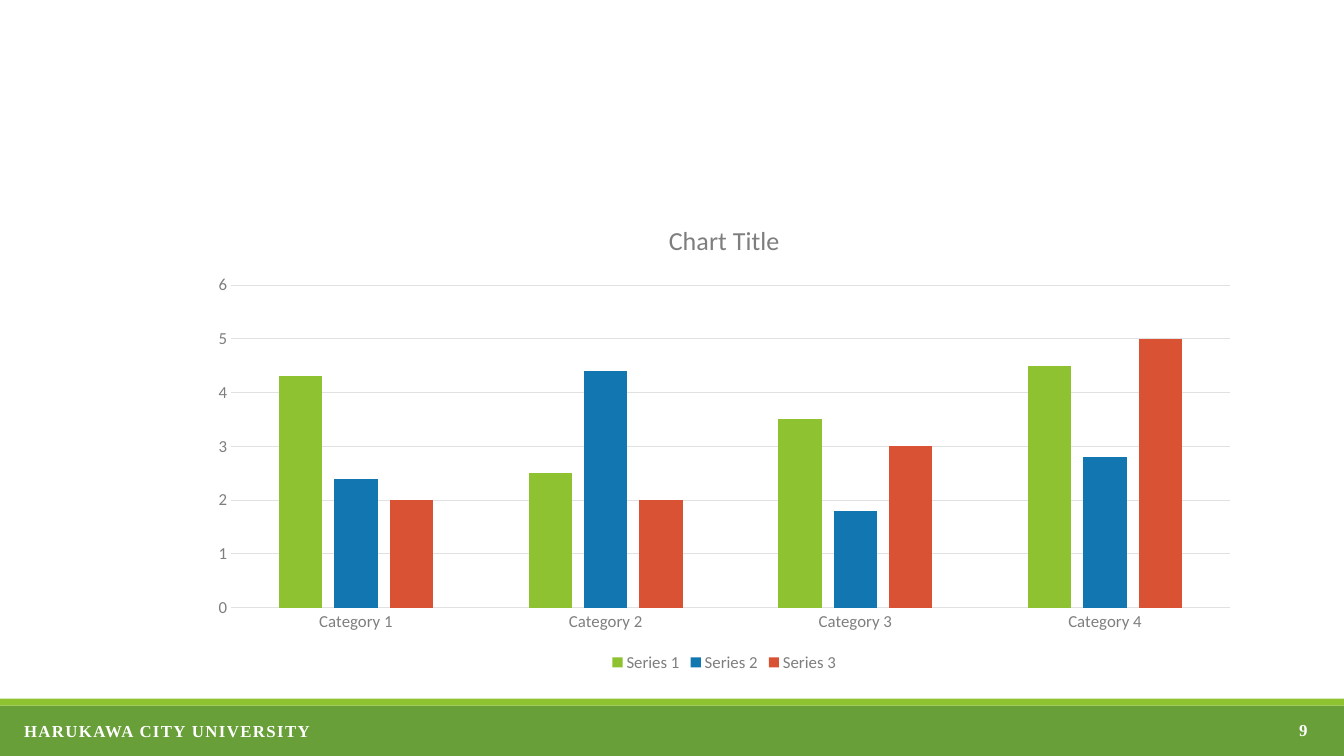
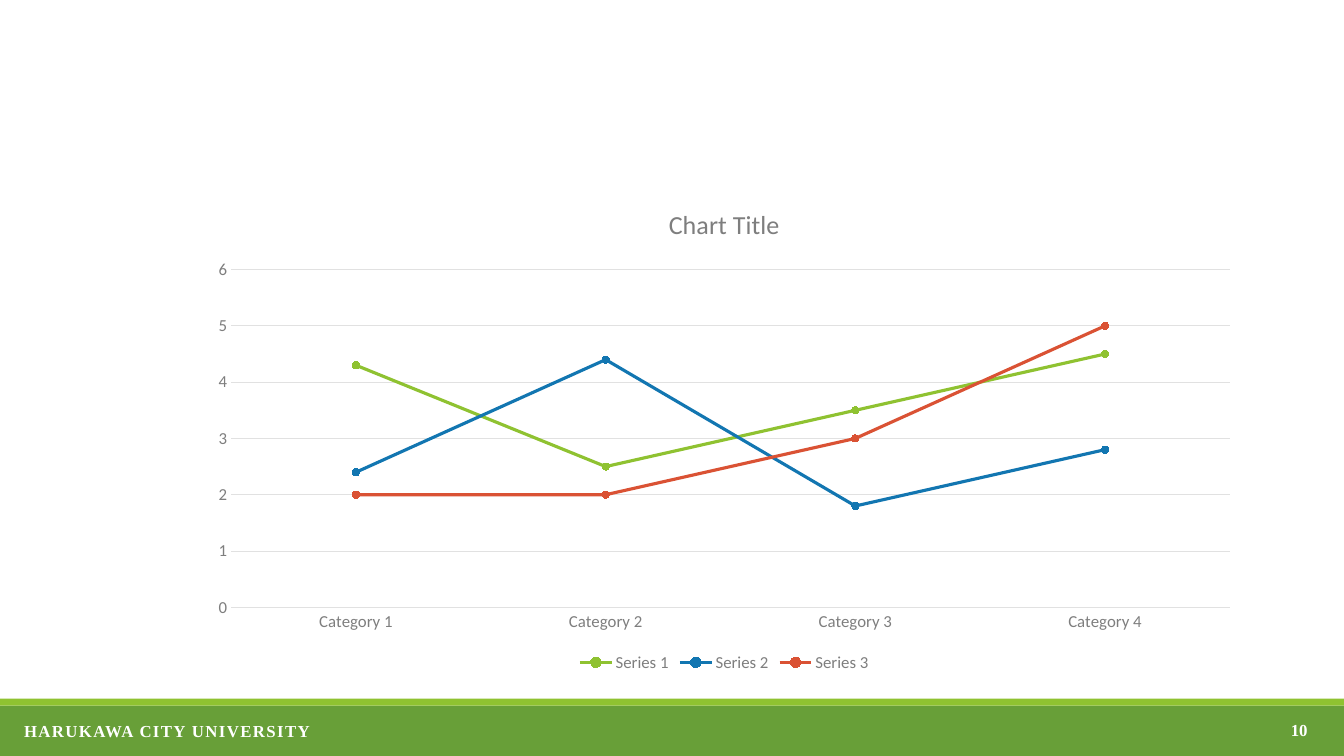
from dataclasses import dataclass

from pptx import Presentation
from pptx.chart.data import CategoryChartData
from pptx.dml.color import RGBColor as Rgb
from pptx.enum.chart import XL_CHART_TYPE as ChartType
from pptx.enum.chart import XL_LEGEND_POSITION as LegendSide
from pptx.enum.chart import XL_MARKER_STYLE as Marker
from pptx.enum.chart import XL_TICK_MARK as Tick
from pptx.enum.shapes import MSO_SHAPE as Shape
from pptx.enum.text import MSO_ANCHOR as Anchor
from pptx.enum.text import MSO_AUTO_SIZE as AutoSize
from pptx.enum.text import PP_ALIGN as Align
from pptx.util import Inches, Pt


@dataclass(frozen=True)
class Theme:
    band: Rgb = Rgb.from_string("689F38")
    accent: Rgb = Rgb.from_string("8FC231")
    white: Rgb = Rgb.from_string("FFFFFF")
    label: Rgb = Rgb.from_string("7E7E7E")
    grid: Rgb = Rgb.from_string("E1E1E1")
    series: tuple = tuple(map(Rgb.from_string, ("8FC231", "1276B1", "DA5234")))
    chart_face: str = "Calibri"
    footer_face: str = "Times New Roman"
    text_size: Pt = Pt(12)
    title_size: Pt = Pt(18.6)
    rule: Pt = Pt(0.75)
    stroke: Pt = Pt(2.25)


theme = Theme()
deck = Presentation()
deck.slide_width, deck.slide_height = Inches(13.33), Inches(7.5)


def area(left, top, width, height):
    across, down = deck.slide_width / 100, deck.slide_height / 100
    return round(left * across), round(top * down), round(width * across), round(height * down)


def style(font, face, size, color, bold=False):
    font.name, font.size, font.bold = face, size, bold
    font.color.rgb = color


bands = (
    (theme.band, area(0, 93.33, 100, 6.67)),
    (theme.accent, area(0, 92.4, 100, 0.93)),
)
brand_area = area(1.05, 94.67, 93.6, 4)
number_area = area(75.53, 93.87, 22.5, 5.33)

chart_bottom = 89.47
charts = ((ChartType.COLUMN_CLUSTERED, 26.8), (ChartType.LINE_MARKERS, 24.67))

data = CategoryChartData()
data.categories = [f"Category {index}" for index in range(1, 5)]
for index, values in enumerate(((4.3, 2.5, 3.5, 4.5), (2.4, 4.4, 1.8, 2.8), (2, 2, 3, 5)), 1):
    data.add_series(f"Series {index}", values)

for number, (kind, chart_top) in enumerate(charts, 9):
    page = deck.slides.add_slide(deck.slide_layouts[6])

    for color, place in bands:
        band = page.shapes.add_shape(Shape.RECTANGLE, *place)
        band.shadow.inherit = False
        band.fill.solid()
        band.fill.fore_color.rgb = color
        band.line.fill.background()

    footer_texts = (
        ("HARUKAWA CITY UNIVERSITY", brand_area, Align.LEFT, Anchor.TOP, AutoSize.SHAPE_TO_FIT_TEXT, 100),
        (str(number), number_area, Align.RIGHT, Anchor.MIDDLE, AutoSize.NONE, 0),
    )
    for text, place, align, anchor, fit, spacing in footer_texts:
        box = page.shapes.add_textbox(*place)
        frame = box.text_frame
        frame.word_wrap = True
        frame.auto_size = fit
        frame.vertical_anchor = anchor
        para = frame.paragraphs[0]
        para.alignment = align
        style(para.font, theme.footer_face, theme.text_size, theme.white, True)
        span = para.add_run()
        span.text = text
        if spacing:
            span._r.get_or_add_rPr().set("spc", str(spacing))

    place = area(14.7, chart_top, 78.38, chart_bottom - chart_top)
    chart = page.shapes.add_chart(kind, *place, data).chart
    style(chart.font, theme.chart_face, theme.text_size, theme.label)

    chart.has_title = True
    chart.chart_title.include_in_layout = False
    title = chart.chart_title.text_frame
    title.text = "Chart Title"
    style(title.paragraphs[0].font, theme.chart_face, theme.title_size, theme.label)

    chart.has_legend = True
    chart.legend.position = LegendSide.BOTTOM
    chart.legend.include_in_layout = False
    style(chart.legend.font, theme.chart_face, theme.text_size, theme.label)

    for axis in (chart.category_axis, chart.value_axis):
        axis.major_tick_mark = axis.minor_tick_mark = Tick.NONE
        style(axis.tick_labels.font, theme.chart_face, theme.text_size, theme.label)
    chart.value_axis.minimum_scale = 0
    chart.value_axis.maximum_scale = 6
    chart.value_axis.major_unit = 1
    chart.value_axis.format.line.fill.background()
    for line in (chart.category_axis.format.line, chart.value_axis.major_gridlines.format.line):
        line.color.rgb = theme.grid
        line.width = theme.rule

    plot = chart.plots[0]
    plot.vary_by_categories = False
    if kind == ChartType.COLUMN_CLUSTERED:
        plot.gap_width = 219
        plot.overlap = -27

    for series, color in zip(plot.series, theme.series):
        fills = [series.format.fill]
        if kind == ChartType.LINE_MARKERS:
            series.smooth = False
            series.format.line.color.rgb = color
            series.format.line.width = theme.stroke
            series.marker.style = Marker.CIRCLE
            series.marker.size = 5
            series.marker.format.line.color.rgb = color
            fills = [series.marker.format.fill]
        for fill in fills:
            fill.solid()
            fill.fore_color.rgb = color

deck.save("out.pptx")
